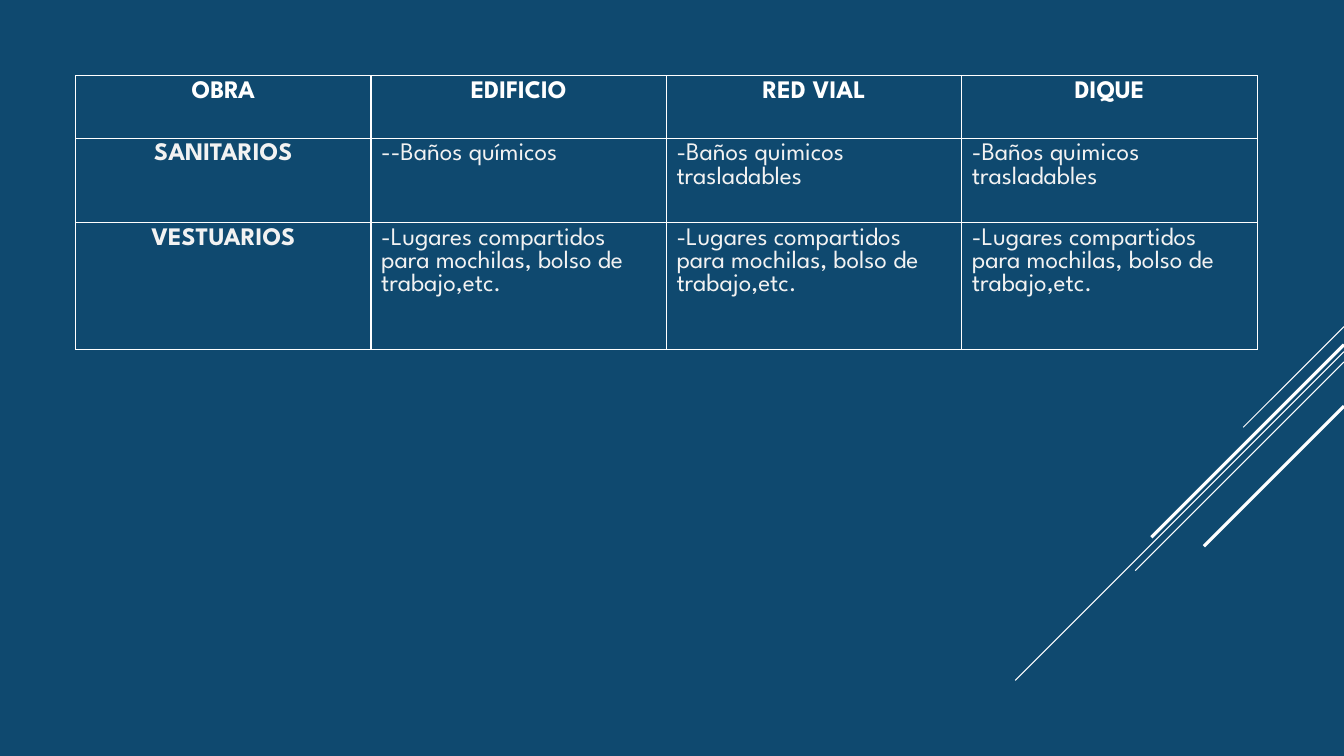
from dataclasses import dataclass

from lxml import etree
from pptx import Presentation
from pptx import util as u
from pptx.dml.color import RGBColor
from pptx.enum import shapes, text
from pptx.oxml.ns import qn


@dataclass(frozen=True)
class Theme:
    background: str = "0F496F"
    line: str = "FFFFFF"
    heading: str = "FFFFFF"
    body: str = "F2F2F2"
    font: str = "League Spartan"
    size: int = 18
    border: float = 1
    thin: float = 0.75
    thick: float = 2.25


@dataclass(frozen=True)
class Ray:
    """A diagonal falling from the right edge; lengths in % of slide height."""
    top: float
    run: float
    weight: float


THEME = Theme()
SLIDE_W, SLIDE_H = u.Inches(13.33), u.Inches(7.5)

RAYS = [
    Ray(43.2, 13.33, THEME.thin),
    Ray(46.53, 43.47, THEME.thin),
    Ray(47.87, 27.6, THEME.thin),
    Ray(45.6, 25.47, THEME.thick),
    Ray(53.73, 18.53, THEME.thick),
]

LOCKERS = "-Lugares compartidos para mochilas, bolso de trabajo,etc."
ROWS = [
    ["OBRA", "EDIFICIO", "RED VIAL", "DIQUE"],
    ["SANITARIOS", "--Baños químicos", "-Baños quimicos trasladables",
     "-Baños quimicos\ntrasladables"],
    ["VESTUARIOS", LOCKERS, LOCKERS, LOCKERS],
]
# Table grid in % of slide height
MARGIN = 10
COLUMN = 39.07
ROW_HEIGHTS = [8.27, 11.2, 16.8]


def share(percent: float) -> int:
    return round(SLIDE_H * percent / 100)


def draw_ray(s, ray: Ray) -> None:
    top, run = share(ray.top), share(ray.run)
    sp = s.shapes.add_connector(shapes.MSO_CONNECTOR.STRAIGHT,
                                SLIDE_W, top, SLIDE_W - run, top + run)
    sp.line.color.rgb = RGBColor.from_string(THEME.line)
    sp.line.width = u.Pt(ray.weight)
    etree.SubElement(sp._element.spPr, qn("a:effectLst"))


def draw_borders(cell) -> None:
    tc_pr = cell._tc.get_or_add_tcPr()
    for side in ("a:lnL", "a:lnR", "a:lnT", "a:lnB"):
        ln = etree.SubElement(tc_pr, qn(side), w=str(u.Pt(THEME.border)))
        fill = etree.SubElement(ln, qn("a:solidFill"))
        etree.SubElement(fill, qn("a:srgbClr"), val=THEME.line)


def fill_cell(cell, words: str, row: int, col: int) -> None:
    draw_borders(cell)
    cell.fill.background()
    is_label = row == 0 or col == 0
    cell.text_frame.text = words
    for p in cell.text_frame.paragraphs:
        p.alignment = text.PP_ALIGN.CENTER if is_label else text.PP_ALIGN.LEFT
        for r in p.runs:
            r.font.name = THEME.font
            r.font.size = u.Pt(THEME.size)
            r.font.bold = is_label
            color = THEME.heading if row == 0 else THEME.body
            r.font.color.rgb = RGBColor.from_string(color)


def draw_table(s, rows: list[list[str]]) -> None:
    n_cols = len(rows[0])
    table = s.shapes.add_table(
        len(rows), n_cols, share(MARGIN), share(MARGIN),
        share(COLUMN * n_cols), share(sum(ROW_HEIGHTS))).table
    table.first_row = table.horz_banding = False
    for column in table.columns:
        column.width = share(COLUMN)
    for i, (height, row) in enumerate(zip(ROW_HEIGHTS, rows)):
        table.rows[i].height = share(height)
        for j, words in enumerate(row):
            fill_cell(table.cell(i, j), words, i, j)


def main() -> None:
    prs = Presentation()
    prs.slide_width, prs.slide_height = SLIDE_W, SLIDE_H
    s = prs.slides.add_slide(prs.slide_layouts[6])
    s.background.fill.solid()
    s.background.fill.fore_color.rgb = RGBColor.from_string(THEME.background)
    for ray in RAYS:
        draw_ray(s, ray)
    draw_table(s, ROWS)
    prs.save("out.pptx")


if __name__ == "__main__":
    main()
